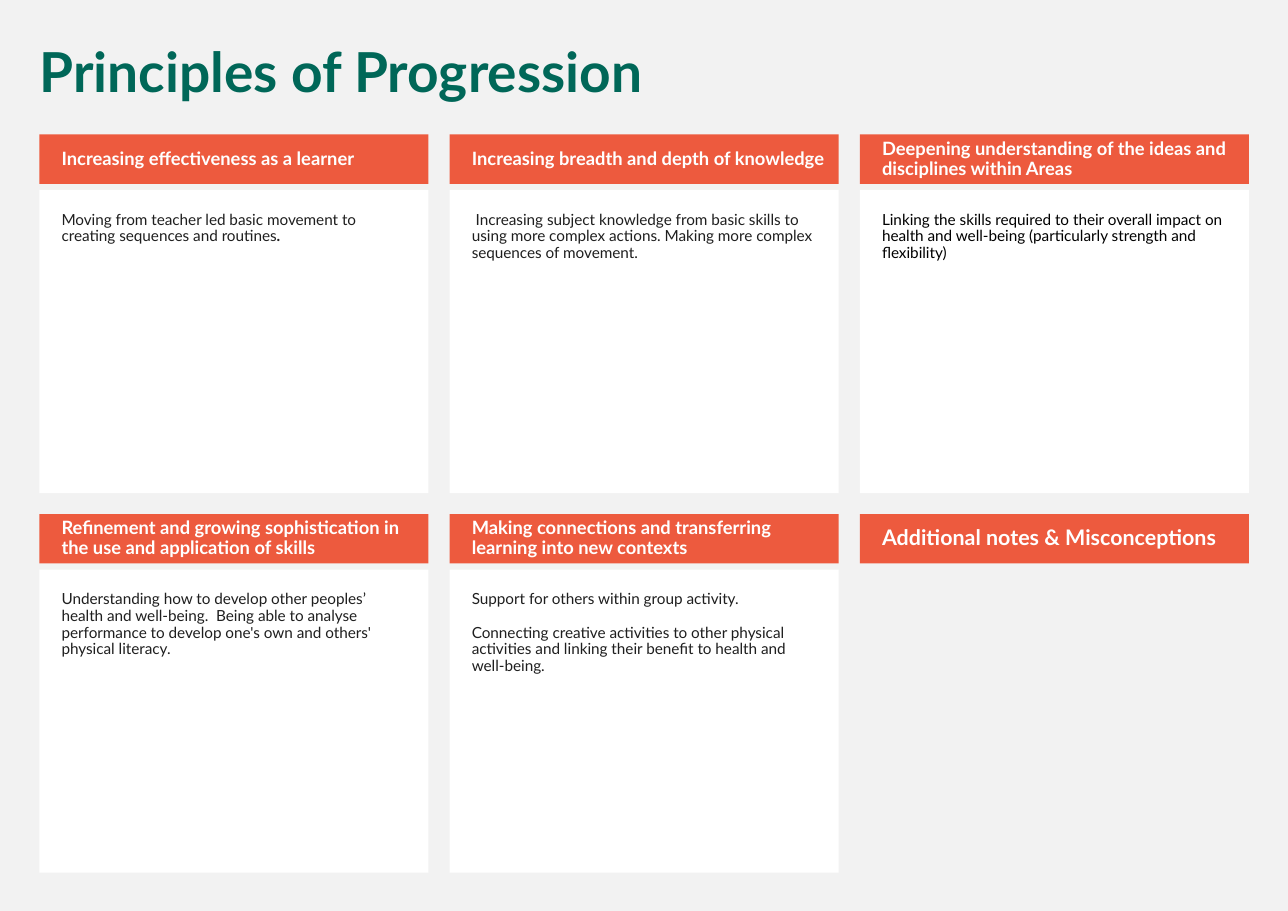
from pptx import Presentation, util as u
from pptx.dml import color
from pptx.enum import shapes, text

COLOURS = {
    "page": "F2F2F2",
    "heading": "ED5A3E",
    "panel": "FFFFFF",
    "title": "006758",
    "light": "FFFFFF",
    "dark": "1F1F1F",
    "black": "000000",
}
TITLE_FRAME = {
    "word_wrap": True,
    "auto_size": text.MSO_AUTO_SIZE.NONE,
    "vertical_anchor": text.MSO_ANCHOR.TOP,
    "margin_left": u.Cm(0.25),
    "margin_right": u.Cm(0.25),
    "margin_top": u.Cm(0.13),
    "margin_bottom": u.Cm(0.13),
}
HEADING_FRAME = TITLE_FRAME | {
    "vertical_anchor": text.MSO_ANCHOR.MIDDLE,
    "margin_left": u.Cm(0.51),
}
PANEL_FRAME = TITLE_FRAME | {
    side: u.Cm(0.51)
    for side in ("margin_left", "margin_right", "margin_top", "margin_bottom")
}
PARAGRAPH = {
    "alignment": text.PP_ALIGN.LEFT,
    "line_spacing": 0.9,
    "space_before": u.Pt(11),
}

LEFT, TOP = 0.91, 3.1
COLUMN_STEP, ROW_STEP = 9.46, 8.75
WIDTH, HEADING_HEIGHT = 8.97, 1.14
PANEL_OFFSET, PANEL_HEIGHT = 1.28, 6.99

PRINCIPLES = [
    ("Increasing effectiveness as a learner", 12, "dark",
     [[("Moving from teacher led basic movement to creating sequences and routines", False),
       (".", True)]]),
    ("Increasing breadth and depth of knowledge", 12, "dark",
     [[(" Increasing subject knowledge from basic skills to using more complex actions. "
        "Making more complex sequences of movement.", False)]]),
    ("Deepening understanding of the ideas and disciplines within Areas", 12, "black",
     [[("Linking the skills required to their overall impact on health and well-being "
        "(particularly strength and flexibility)", False)]]),
    ("Refinement and growing sophistication in the use and application of skills", 12, "dark",
     [[("Understanding how to develop other peoples’ health and well-being.  Being able to "
        "analyse performance to develop one's own and others' physical literacy.", False)]]),
    ("Making connections and transferring learning into new contexts", 12, "dark",
     [[("Support for others within group activity.", False)],
      [("Connecting creative activities to other physical activities and linking their "
        "benefit to health and well-being.", False)]]),
    ("Additional notes & Misconceptions", 14, "dark", []),
]


def write(holder, paragraphs, frame_format, size, colour):
    frame = holder.text_frame
    for key, value in frame_format.items():
        setattr(frame, key, value)
    for index, runs in enumerate(paragraphs):
        paragraph = frame.add_paragraph() if index else frame.paragraphs[0]
        for key, value in PARAGRAPH.items():
            setattr(paragraph, key, value)
        for wording, bold in runs:
            run = paragraph.add_run()
            run.text = wording
            for key, value in {"name": "Lato", "size": u.Pt(size), "bold": bold}.items():
                setattr(run.font, key, value)
            run.font.color.rgb = color.RGBColor.from_string(COLOURS[colour])


def add_block(left, top, height, fill):
    block = slide.shapes.add_shape(
        shapes.MSO_SHAPE.RECTANGLE, u.Cm(left), u.Cm(top), u.Cm(WIDTH), u.Cm(height))
    block.shadow.inherit = False
    block.fill.solid()
    block.fill.fore_color.rgb = color.RGBColor.from_string(COLOURS[fill])
    block.line.fill.background()
    return block


deck = Presentation()
deck.slide_width, deck.slide_height = u.Cm(29.7), u.Cm(21)
slide = deck.slides.add_slide(deck.slide_layouts[5])
slide.background.fill.solid()
slide.background.fill.fore_color.rgb = color.RGBColor.from_string(COLOURS["page"])

title = slide.shapes.title
title_place = {"left": 0.66, "top": 0.91, "width": 28.14, "height": 1.65}
for key, value in title_place.items():
    setattr(title, key, u.Cm(value))
write(title, [[("Principles of Progression", True)]], TITLE_FRAME, 36, "title")

for index, (heading_text, heading_size, panel_colour, panel_text) in enumerate(PRINCIPLES):
    row, column = divmod(index, 3)
    left = LEFT + column * COLUMN_STEP
    top = TOP + row * ROW_STEP
    if panel_text:
        panel = add_block(left, top + PANEL_OFFSET, PANEL_HEIGHT, "panel")
        write(panel, panel_text, PANEL_FRAME, 10, panel_colour)
    heading = add_block(left, top, HEADING_HEIGHT, "heading")
    write(heading, [[(heading_text, True)]], HEADING_FRAME, heading_size, "light")

deck.save("out.pptx")
